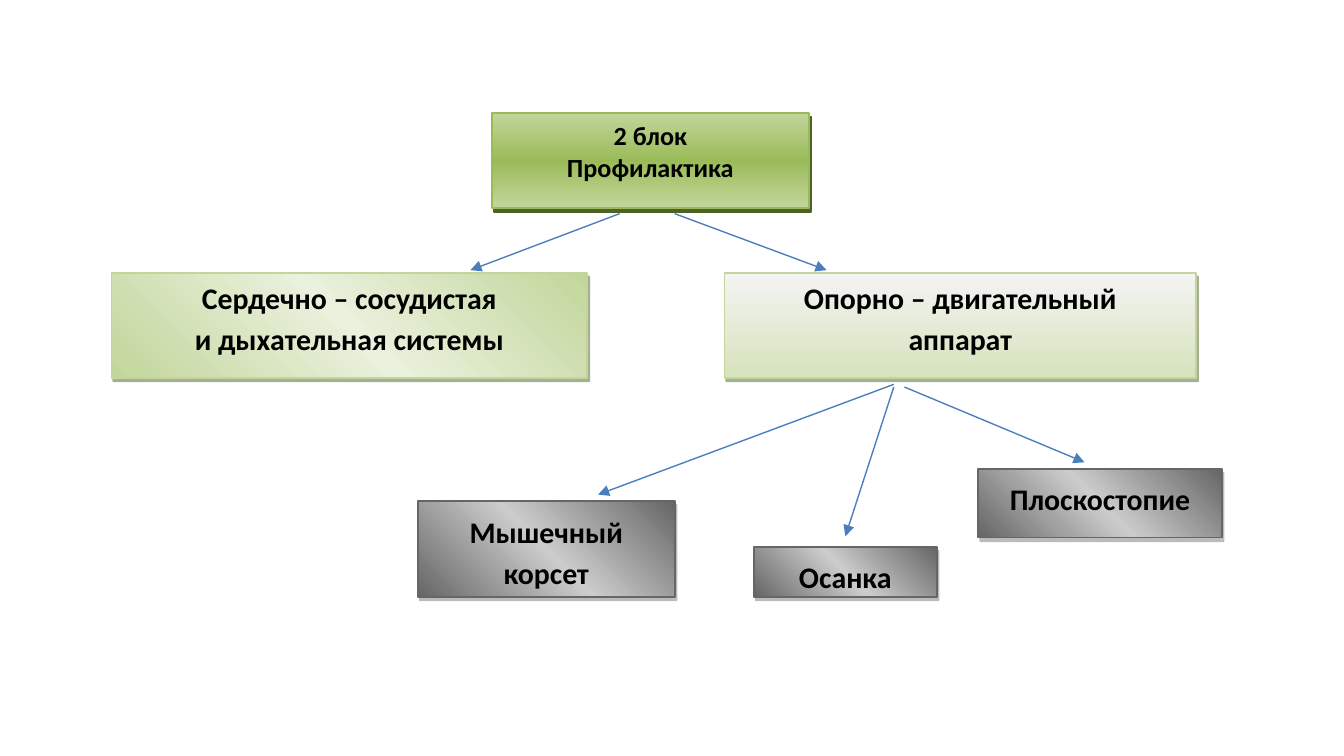
from lxml.etree import SubElement
from pptx import Presentation
from pptx.dml.color import RGBColor
from pptx.enum.shapes import MSO_CONNECTOR, MSO_SHAPE
from pptx.enum.text import MSO_ANCHOR, PP_ALIGN
from pptx.oxml.ns import qn
from pptx.util import Inches, Pt

BLACK = RGBColor(0x00, 0x00, 0x00)
BLUE = RGBColor(0x4B, 0x7E, 0xBC)
GREEN = RGBColor(0x9B, 0xBB, 0x59)
LIGHT_GREEN = RGBColor(0xC2, 0xD6, 0x9B)
PALE_GREEN = RGBColor(0xEA, 0xF1, 0xDD)
SOFT_GREEN = RGBColor(0xD6, 0xE3, 0xBC)
DARK_GREEN = RGBColor(0x4E, 0x61, 0x28)
WHITE_GRAY = RGBColor(0xF4, 0xF4, 0xF4)
LIGHT_GRAY = RGBColor(0xCC, 0xCC, 0xCC)
MID_GRAY = RGBColor(0x79, 0x79, 0x79)
DARK_GRAY = RGBColor(0x66, 0x66, 0x66)


def add_color(parent, color, opacity=100):
    element = SubElement(parent, qn("a:srgbClr"), val=str(color))
    if opacity < 100:
        SubElement(element, qn("a:alpha"), val=str(opacity * 1000))


def style_box(shape, colors, angle, line_color, shadow_color, opacity):
    """Apply evenly spaced gradient colors, an outline and an offset shadow."""
    shape.fill.gradient()
    shape.fill.gradient_angle = angle
    properties = shape._element.spPr
    stops = properties.find(qn("a:gradFill")).find(qn("a:gsLst"))
    stops.clear()
    for index, color in enumerate(colors):
        position = 100000 * index // (len(colors) - 1)
        add_color(SubElement(stops, qn("a:gs"), pos=str(position)), color)
    shape.line.color.rgb = line_color
    shape.line.width = Pt(1)
    shape.shadow.inherit = False
    shadow = SubElement(properties.find(qn("a:effectLst")), qn("a:outerShdw"),
                        dist=str(Pt(2.2)), dir=str(63 * 60000),
                        algn="ctr", rotWithShape="0")
    add_color(shadow, shadow_color, opacity)


presentation = Presentation()
presentation.slide_width = Inches(10)
presentation.slide_height = Inches(10) * 9 // 16
slide = presentation.slides.add_slide(presentation.slide_layouts[6])

# Gradient colors, counterclockwise angle, outline, shadow, shadow opacity
title_style = ([LIGHT_GREEN, GREEN, LIGHT_GREEN], 270, GREEN, DARK_GREEN, 100)
heart_style = ([LIGHT_GREEN, PALE_GREEN, LIGHT_GREEN], 45, LIGHT_GREEN, DARK_GREEN, 50)
motor_style = ([WHITE_GRAY, SOFT_GREEN], 270, LIGHT_GREEN, DARK_GREEN, 50)
topic_style = ([DARK_GRAY, LIGHT_GRAY, DARK_GRAY], 45, DARK_GRAY, MID_GRAY, 50)

# Left, top, width, height, style, text size, lines as (text, spaced)
boxes = [
    (3.66, 0.84, 2.36, 0.71, title_style, 14,
     [("2 блок", False), ("Профилактика", False)]),
    (0.83, 2.03, 3.54, 0.78, heart_style, 16,
     [("Сердечно – сосудистая", False), ("и дыхательная системы", True)]),
    (5.39, 2.03, 3.51, 0.78, motor_style, 16,
     [("Опорно – двигательный", False), ("аппарат", True)]),
    (3.11, 3.73, 1.91, 0.71, topic_style, 16, [("Мышечный корсет", True)]),
    (5.61, 4.07, 1.36, 0.37, topic_style, 16, [("Осанка", True)]),
    (7.28, 3.49, 1.81, 0.51, topic_style, 16, [("Плоскостопие", True)]),
]
for left, top, width, height, style, size, lines in boxes:
    shape = slide.shapes.add_shape(MSO_SHAPE.RECTANGLE, Inches(left), Inches(top),
                                   Inches(width), Inches(height))
    style_box(shape, *style)
    text_frame = shape.text_frame
    text_frame.word_wrap = True
    text_frame.vertical_anchor = MSO_ANCHOR.TOP
    for index, (text, spaced) in enumerate(lines):
        paragraph = text_frame.add_paragraph() if index else text_frame.paragraphs[0]
        paragraph.alignment = PP_ALIGN.CENTER
        if spaced:
            paragraph.line_spacing = 1.15
            paragraph.space_after = Pt(10)
        run = paragraph.add_run()
        run.text = text
        run.font.name = "Calibri"
        run.font.size = Pt(size)
        run.font.bold = True
        run.font.color.rgb = BLACK

arrows = [
    (5.02, 1.59, 6.15, 2.01),
    (4.61, 1.59, 3.5, 2.01),
    (6.73, 2.88, 8.07, 3.44),
    (6.65, 2.88, 6.29, 3.99),
    (6.65, 2.86, 4.45, 3.68),
]
for points in arrows:
    arrow = slide.shapes.add_connector(MSO_CONNECTOR.STRAIGHT,
                                       *[Inches(value) for value in points])
    arrow.line.color.rgb = BLUE
    arrow.line.width = Pt(0.75)
    SubElement(arrow.line._get_or_add_ln(), qn("a:tailEnd"), type="triangle")
    SubElement(arrow._element.spPr, qn("a:effectLst"))

presentation.save("out.pptx")
